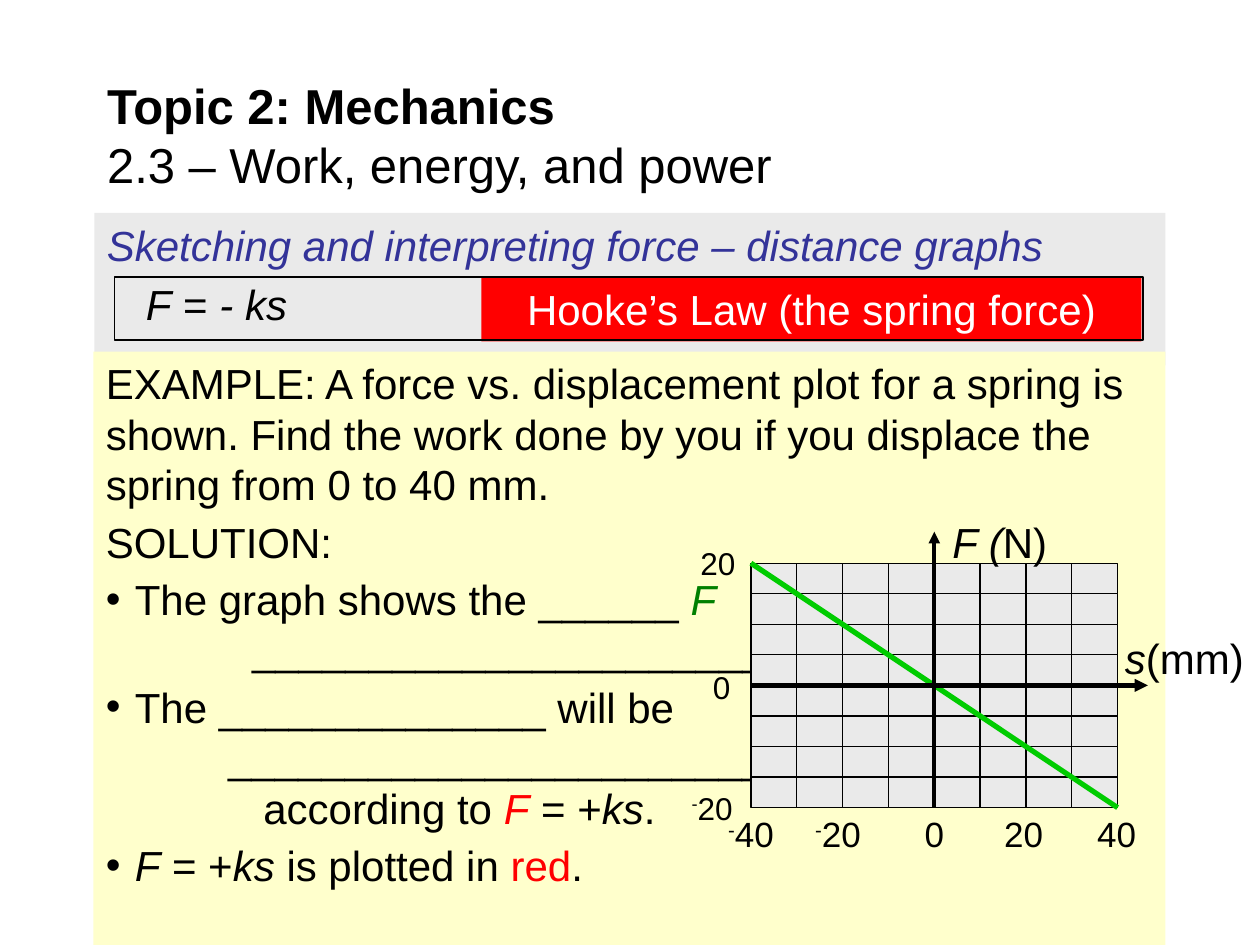
"""Build a physics slide on Hooke's law with a force-displacement graph."""
from lxml.etree import SubElement
from pptx import Presentation
from pptx.dml.color import RGBColor
from pptx.enum.shapes import MSO_CONNECTOR as CONN, MSO_SHAPE as SHAPE
from pptx.enum.text import MSO_ANCHOR as ANCHOR, MSO_AUTO_SIZE as FIT, PP_ALIGN as ALIGN
from pptx.oxml.ns import qn
from pptx.util import Inches, Pt

COLORS = {"black": "000000", "white": "FFFFFF", "gray": "EAEAEA", "cream": "FFFFCC",
          "indigo": "333399", "red": "FF0000", "green": "008000", "lime": "00CC00"}


def write(p, runs, size):
    """Add runs given as (text, color, style), where style is i, b, ^ or empty."""
    for text, color, style in runs:
        r = p.add_run()
        r.text = text
        r.font.name, r.font.size = "Arial", Pt(size)
        r.font.color.rgb = RGBColor.from_string(COLORS[color])
        r.font.italic, r.font.bold = style == "i", style == "b"
        if style == "^":
            r._r.get_or_add_rPr().set("baseline", "30000")


def add_rect(shapes, box, fill=None, line=None):
    """Add a plain rectangle with optional fill color and black line width."""
    sp = shapes.add_shape(SHAPE.RECTANGLE, *map(Inches, box))
    sp.shadow.inherit = False
    if fill:
        sp.fill.solid()
        sp.fill.fore_color.rgb = RGBColor.from_string(COLORS[fill])
    else:
        sp.fill.background()
    if line:
        sp.line.color.rgb = RGBColor.from_string(COLORS["black"])
        sp.line.width = Pt(line)
    else:
        sp.line.fill.background()
    return sp


prs = Presentation()
prs.slide_width, prs.slide_height = Inches(10), Inches(7.5)
s = prs.slides.add_slide(prs.slide_layouts[1])

panel = add_rect(s.shapes, (0.75, 1.69, 8.5, 1.21), "gray")
s.shapes._spTree.insert(2, panel._element)
panel.text_frame.vertical_anchor = ANCHOR.TOP
p = panel.text_frame.paragraphs[0]
p.alignment = ALIGN.LEFT
write(p, [("Sketching and interpreting force – distance graphs", "indigo", "i")], 24)

title, body = s.shapes.title, s.placeholders[1]
for sp, box in ((title, (0.75, 0.58, 8.5, 0.98)), (body, (0.74, 2.79, 8.51, 4.71))):
    sp.left, sp.top, sp.width, sp.height = map(Inches, box)
    sp.text_frame.auto_size = FIT.NONE

title.text_frame.vertical_anchor = ANCHOR.MIDDLE
p = title.text_frame.paragraphs[0]
p.alignment = ALIGN.LEFT
write(p, [("Topic 2: Mechanics", "black", "b")], 28)
p.add_line_break()
write(p, [("2.3 – Work, energy, and power", "black", "")], 28)

body.fill.solid()
body.fill.fore_color.rgb = RGBColor.from_string(COLORS["cream"])
body.text_frame.vertical_anchor = ANCHOR.TOP
hang = 0.23
blank = "_" * 24
paragraphs = [
    (0, 0, False, [("EXAMPLE: A force vs. displacement plot for a spring is shown. Find the work "
                    "done by you if you displace the spring from 0 to 40 mm.", "black", "")]),
    (0, 4, False, [("SOLUTION:", "black", "")]),
    (hang, 4, True, [("The graph shows the ______ ", "black", ""), ("F", "green", "i")]),
    (1.16, 0, False, [(blank + ".", "black", "")]),
    (hang, 4, True, [("The ______________ will be", "black", "")]),
    (0.97, 0, False, [(blank, "black", "")]),
    (1.25, 0, False, [("according to ", "black", ""), ("F", "red", "i"), (" = +", "black", ""),
                      ("ks", "black", "i"), (".", "black", "")]),
    (hang, 4, True, [("F", "black", "i"), (" = +", "black", ""), ("ks ", "black", "i"),
                     ("is plotted in ", "black", ""), ("red", "red", ""), (".", "black", "")]),
]
for i, (margin, before, bullet, runs) in enumerate(paragraphs):
    p = body.text_frame.add_paragraph() if i else body.text_frame.paragraphs[0]
    p.space_before = Pt(before)
    pPr = p._p.get_or_add_pPr()
    pPr.set("marL", str(Inches(margin)))
    pPr.set("indent", str(-Inches(hang) if bullet else 0))
    if not bullet:
        SubElement(pPr, qn("a:buNone"))
    write(p, runs, 24)

law = s.shapes.add_group_shape().shapes
formula = law.add_textbox(*map(Inches, (1.06, 2.21, 1.49, 0.35)))
formula.text_frame.word_wrap = True
p = formula.text_frame.paragraphs[0]
p.line_spacing = 0.9
write(p, [("F", "black", "i"), (" = ", "black", ""), ("- ks", "black", "i")], 24)
name = add_rect(law, (3.82, 2.2, 5.24, 0.51), "red")
name.text_frame.vertical_anchor = ANCHOR.TOP
p = name.text_frame.paragraphs[0]
p.alignment = ALIGN.CENTER
write(p, [("Hooke’s Law (the spring force)", "white", "")], 24)
add_rect(law, (0.91, 2.2, 8.16, 0.5), line=1)

graph = s.shapes.add_group_shape().shapes
left, top, width, height, count = 5.96, 4.47, 2.91, 1.94, 8
cell_w, cell_h = width / count, height / count
for row in range(count):
    for col in range(count):
        add_rect(graph, (left + col * cell_w, top + row * cell_h, cell_w, cell_h), "gray", 0.75)

right, bottom = left + width, top + height
mid_x, mid_y = left + width / 2, top + height / 2
lines = [((left, top, right, bottom), "lime", 3, False),
         ((mid_x, bottom, mid_x, 4.22), "black", 2.25, True),
         ((left, mid_y, 9.11, mid_y), "black", 2.5, True)]
for ends, color, weight, arrow in lines:
    line = graph.add_connector(CONN.STRAIGHT, *map(Inches, ends))
    line.line.color.rgb = RGBColor.from_string(COLORS[color])
    line.line.width = Pt(weight)
    if arrow:
        SubElement(line.line._get_or_add_ln(), qn("a:tailEnd"), type="triangle")
    SubElement(line._element.spPr, qn("a:effectLst"))

labels = [
    ((7.46, 4.05, 0.96, 0.51), 24, [("F (", "i"), ("N)", "")]),
    ((8.83, 4.97, 1.16, 0.51), 24, [("s", "i"), ("(mm)", "")]),
    ((5.46, 4.27, 0.48, 0.4), 18, [("20", "")]),
    ((5.56, 5.25, 0.34, 0.4), 18, [("0", "")]),
    ((5.39, 6.21, 0.53, 0.4), 18, [("-", "^"), ("20", "")]),
    ((5.68, 6.4, 0.58, 0.44), 20, [("-", "^"), ("40", "")]),
    ((6.37, 6.4, 0.58, 0.44), 20, [("-", "^"), ("20", "")]),
    ((7.24, 6.4, 0.36, 0.43), 20, [("0", "")]),
    ((7.87, 6.4, 0.51, 0.43), 20, [("20", "")]),
    ((8.61, 6.4, 0.51, 0.43), 20, [("40", "")]),
]
for box, size, parts in labels:
    tf = graph.add_textbox(*map(Inches, box)).text_frame
    tf.word_wrap = False
    tf.auto_size = FIT.SHAPE_TO_FIT_TEXT
    write(tf.paragraphs[0], [(text, "black", style) for text, style in parts], size)

prs.save("out.pptx")
